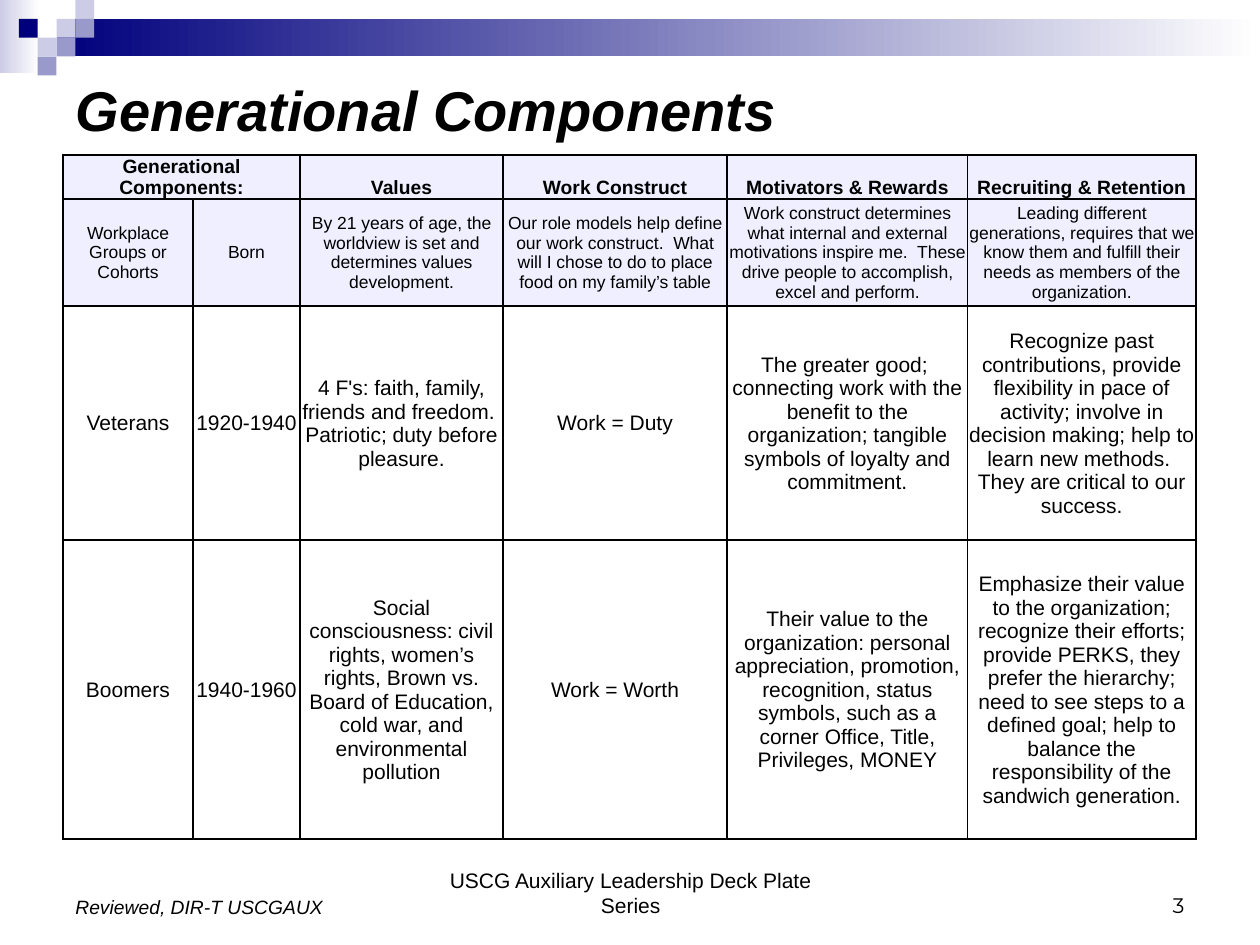
from dataclasses import dataclass

from lxml.etree import SubElement
from pptx import Presentation
from pptx.dml.color import RGBColor
from pptx.enum.shapes import MSO_SHAPE
from pptx.enum.text import MSO_ANCHOR, MSO_AUTO_SIZE, PP_ALIGN
from pptx.oxml.ns import qn
from pptx.util import Cm, Pt


@dataclass(frozen=True)
class Theme:
    font: str = "Arial"
    number_font: str = "Montserrat"
    ink: str = "000000"
    paper: str = "FFFFFF"
    navy: str = "00007D"
    violet: str = "9999CC"
    lavender: str = "CCCCE6"
    header_tint: str = "EFEFFF"
    title_size: int = 32
    body_size: int = 12
    heading_size: int = 11
    intro_size: int = 10
    border: int = 1


THEME = Theme()

COLUMN_WIDTHS = [2.62, 2.16, 4.09, 4.52, 4.85, 4.6]
ROW_HEIGHTS = [0.89, 2.16, 4.72, 6.02]
GENERATIONS = [
    ["Generational Components:", "", "Values", "Work Construct",
     "Motivators & Rewards", "Recruiting & Retention"],
    ["Workplace Groups or Cohorts", "Born",
     "By 21 years of age, the worldview is set and determines values development.",
     "Our role models help define our work construct.  What will I chose to do "
     "to place food on my family’s table",
     "Work construct determines what internal and external motivations inspire "
     "me.  These drive people to accomplish, excel and perform.",
     "Leading different generations, requires that we know them and fulfill "
     "their needs as members of the organization."],
    ["Veterans", "1920-1940",
     "4 F's: faith, family, friends and freedom.  Patriotic; duty before pleasure.",
     "Work = Duty",
     "The greater good;  connecting work with the benefit to the organization; "
     "tangible symbols of loyalty and commitment.",
     "Recognize past contributions, provide flexibility in pace of activity; "
     "involve in decision making; help to learn new methods.  They are critical "
     "to our success."],
    ["Boomers", "1940-1960",
     "Social consciousness: civil rights, women’s rights, Brown vs. Board of "
     "Education, cold war, and environmental pollution",
     "Work = Worth",
     "Their value to the organization: personal appreciation, promotion, "
     "recognition, status symbols, such as a corner Office, Title, Privileges, MONEY",
     "Emphasize their value to the organization; recognize their efforts; "
     "provide PERKS, they prefer the hierarchy; need to see steps to a defined "
     "goal; help to balance the responsibility of the sandwich generation."],
]


def style_paragraph(paragraph, size, align, font=THEME.font, bold=False, italic=False):
    paragraph.alignment = align
    paragraph.font.name = font
    paragraph.font.size = Pt(size)
    paragraph.font.bold = bold
    paragraph.font.italic = italic
    paragraph.font.color.rgb = RGBColor.from_string(THEME.ink)


def add_block(slide, left, top, width, height, color, fade_to=None):
    """A borderless rectangle, solid or fading from left to right."""
    block = slide.shapes.add_shape(
        MSO_SHAPE.RECTANGLE, Cm(left), Cm(top), Cm(width), Cm(height))
    block.shadow.inherit = False
    block.line.fill.background()
    if fade_to:
        block.fill.gradient()
        block.fill.gradient_angle = 0
        for stop, stop_color in zip(block.fill.gradient_stops, (color, fade_to)):
            stop.color.rgb = RGBColor.from_string(stop_color)
    else:
        block.fill.solid()
        block.fill.fore_color.rgb = RGBColor.from_string(color)


def add_banner(slide):
    add_block(slide, 0, 0, 0.79, 1.47, THEME.lavender, THEME.paper)
    add_block(slide, 1.14, 0.38, 24.26, 0.76, THEME.navy, THEME.paper)
    # Mosaic squares on a regular grid: column, row, colour
    step = 0.38
    mosaic = [
        (3, 1, THEME.lavender), (4, 0, THEME.lavender), (4, 1, THEME.violet),
        (2, 2, THEME.lavender), (1, 1, THEME.navy), (3, 2, THEME.violet),
        (2, 3, THEME.violet),
    ]
    for column, row, color in mosaic:
        add_block(slide, column * step, row * step, step, step, color)


def add_title(slide, text):
    title = slide.shapes.title
    title.left, title.top, title.width, title.height = Cm(1.27), Cm(1.27), Cm(22.86), Cm(1.85)
    title.text_frame.text = text
    title.text_frame.vertical_anchor = MSO_ANCHOR.MIDDLE
    style_paragraph(title.text_frame.paragraphs[0], THEME.title_size,
                    PP_ALIGN.LEFT, bold=True, italic=True)


def add_borders(cell):
    properties = cell._tc.get_or_add_tcPr()
    for side in ("a:lnL", "a:lnR", "a:lnT", "a:lnB"):
        line = SubElement(properties, qn(side), w=str(Pt(THEME.border)))
        fill = SubElement(line, qn("a:solidFill"))
        SubElement(fill, qn("a:srgbClr"), val=THEME.ink)


def format_cell(cell, text, size, bold, anchor, tint):
    cell.text = text
    cell.vertical_anchor = anchor
    cell.margin_left = cell.margin_right = cell.margin_top = Cm(0.02)
    cell.margin_bottom = 0
    style_paragraph(cell.text_frame.paragraphs[0], size, PP_ALIGN.CENTER, bold=bold)
    add_borders(cell)
    if tint:
        cell.fill.solid()
        cell.fill.fore_color.rgb = RGBColor.from_string(tint)
    else:
        cell.fill.background()


def add_generations_table(slide):
    table = slide.shapes.add_table(
        len(ROW_HEIGHTS), len(COLUMN_WIDTHS), Cm(1.27), Cm(3.12),
        Cm(sum(COLUMN_WIDTHS)), Cm(sum(ROW_HEIGHTS))).table
    table.first_row = table.horz_banding = False
    for column, width in zip(table.columns, COLUMN_WIDTHS):
        column.width = Cm(width)
    for row, height in zip(table.rows, ROW_HEIGHTS):
        row.height = Cm(height)

    # Size, bold, anchor and tint of each row
    heading = (THEME.heading_size, True, MSO_ANCHOR.BOTTOM, THEME.header_tint)
    intro = (THEME.intro_size, False, MSO_ANCHOR.MIDDLE, THEME.header_tint)
    body = (THEME.body_size, False, MSO_ANCHOR.MIDDLE, None)
    for row, texts, row_format in zip(table.rows, GENERATIONS, (heading, intro, body, body)):
        for cell, text in zip(row.cells, texts):
            format_cell(cell, text, *row_format)
    table.cell(0, 0).merge(table.cell(0, 1))


def add_note(slide, text, left, top, width, height, size, align, wrap=True, **font_style):
    note = slide.shapes.add_textbox(Cm(left), Cm(top), Cm(width), Cm(height))
    frame = note.text_frame
    frame.text = text
    frame.word_wrap = wrap
    frame.vertical_anchor = MSO_ANCHOR.BOTTOM if wrap else MSO_ANCHOR.TOP
    frame.auto_size = MSO_AUTO_SIZE.NONE if wrap else MSO_AUTO_SIZE.SHAPE_TO_FIT_TEXT
    style_paragraph(frame.paragraphs[0], size, align, **font_style)


def add_footer(slide):
    add_note(slide, "USCG Auxiliary Leadership Deck Plate Series", 8.69, 17.35, 8.05, 1.27,
             THEME.body_size, PP_ALIGN.CENTER)
    add_note(slide, "3", 18.21, 17.35, 5.92, 1.27,
             THEME.body_size, PP_ALIGN.RIGHT, font=THEME.number_font)
    add_note(slide, "Reviewed, DIR-T USCGAUX", 1.27, 17.93, 5.56, 0.74,
             THEME.heading_size, PP_ALIGN.LEFT, wrap=False, italic=True)


def main():
    deck = Presentation()
    deck.slide_width, deck.slide_height = Cm(25.4), Cm(19.05)
    title_only = deck.slide_layouts[5]
    slide = deck.slides.add_slide(title_only)
    add_banner(slide)
    add_title(slide, "Generational Components")
    add_generations_table(slide)
    add_footer(slide)
    deck.save("out.pptx")


if __name__ == "__main__":
    main()
